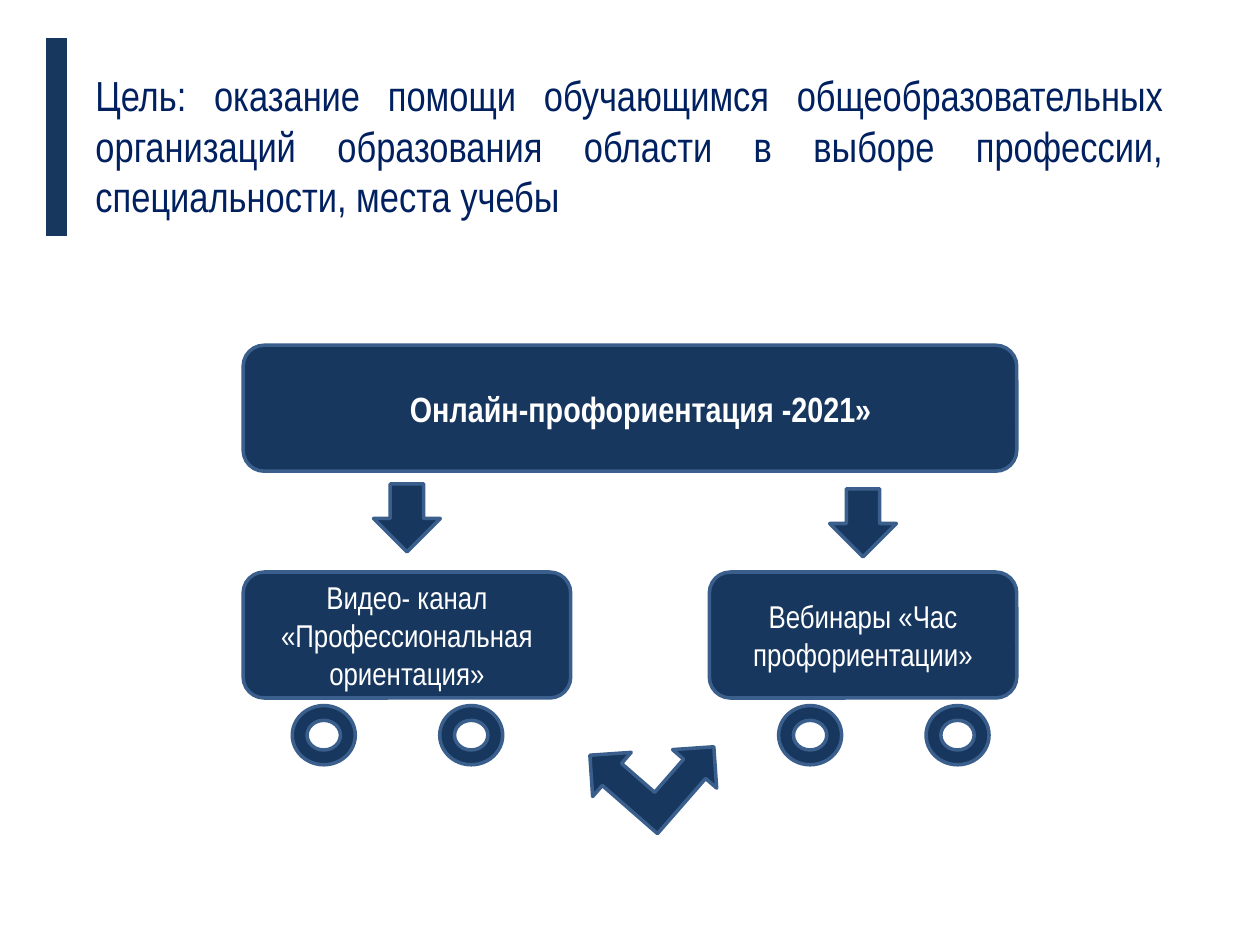
from collections import namedtuple

from pptx import Presentation
from pptx import util as u
from pptx.dml.color import RGBColor
from pptx.enum import shapes, text

COLORS = {"navy": "17375E", "edge": "3A5F8C", "title": "002060", "white": "FFFFFF"}
FONT = "Arial Narrow"
COLUMNS, ROWS = 100, 75
WIDTH, HEIGHT = u.Inches(10), u.Inches(7.5)
KIND = shapes.MSO_SHAPE

# Left, top, width and height in grid columns and rows
Box = namedtuple("Box", "left top width height")


def place(box):
    column, row = WIDTH / COLUMNS, HEIGHT / ROWS
    return [int(size * unit) for size, unit in zip(box, (column, row, column, row))]


def color(name):
    return RGBColor.from_string(COLORS[name])


def add_figure(slide, kind, box, line="edge", rotation=0):
    shape = slide.shapes.add_shape(kind, *place(box))
    shape.shadow.inherit = False
    shape.fill.solid()
    shape.fill.fore_color.rgb = color("navy")
    shape.line.color.rgb = color(line)
    shape.line.width = u.Pt(2)
    shape.rotation = rotation
    return shape


def write(shape, words, size=18, bold=False, ink="white",
          align=text.PP_ALIGN.CENTER, indent=0):
    frame = shape.text_frame
    frame.word_wrap = True
    frame.vertical_anchor = text.MSO_ANCHOR.MIDDLE
    frame.margin_left = u.Inches(0.1 + indent)
    paragraph = frame.paragraphs[0]
    paragraph.alignment = align
    run = paragraph.add_run()
    run.text = words
    run.font.name = FONT
    run.font.size = u.Pt(size)
    run.font.bold = bold
    run.font.color.rgb = color(ink)


def add_heading(slide, box, words):
    """Accent bar at the left of the box, justified goal text beside it."""
    add_figure(slide, KIND.RECTANGLE, box._replace(width=2), line="white")
    goal = Box(box.left + 3.1, box.top + 2.4, box.width - 3.1, 12.5)
    write(slide.shapes.add_textbox(*place(goal)), words, size=24, ink="title",
          align=text.PP_ALIGN.JUSTIFY)


def add_program(slide, box, words):
    panel = add_figure(slide, KIND.ROUNDED_RECTANGLE, box)
    write(panel, words, size=20, bold=True, indent=0.17)


def add_cart(slide, box, words, arrow_rise, wheel_shift):
    """Labelled panel with an arrow above it and two wheels below."""
    center = box.left + box.width / 2
    arrow = Box(center - 2.65, box.top - arrow_rise, 5.3, 5.4)
    add_figure(slide, KIND.DOWN_ARROW, arrow)
    write(add_figure(slide, KIND.ROUNDED_RECTANGLE, box), words)
    for side in (-1, 1):
        middle = center + wheel_shift + side * 5.85
        wheel = Box(middle - 2.5, box.top + box.height + 0.6, 5, 4.7)
        add_figure(slide, KIND.DONUT, wheel)


def main():
    presentation = Presentation()
    presentation.slide_width, presentation.slide_height = WIDTH, HEIGHT
    slide = presentation.slides.add_slide(presentation.slide_layouts[6])

    add_heading(slide, Box(3.5, 2.9, 89.8, 16),
                "Цель: оказание помощи обучающимся общеобразовательных "
                "организаций образования области в выборе профессии, "
                "специальности, места учебы")
    add_program(slide, Box(19.3, 27.4, 61.4, 10), "Онлайн-профориентация -2021»")
    add_cart(slide, Box(19.3, 45.4, 26, 10),
             "Видео- канал «Профессиональная ориентация»",
             arrow_rise=7, wheel_shift=-0.75)
    add_cart(slide, Box(56.3, 45.4, 24.4, 10), "Вебинары «Час профориентации»",
             arrow_rise=6.6, wheel_shift=1.65)
    add_figure(slide, KIND.LEFT_UP_ARROW, Box(47.2, 56.6, 9.3, 9.3), rotation=41.1)

    presentation.save("out.pptx")


if __name__ == "__main__":
    main()
